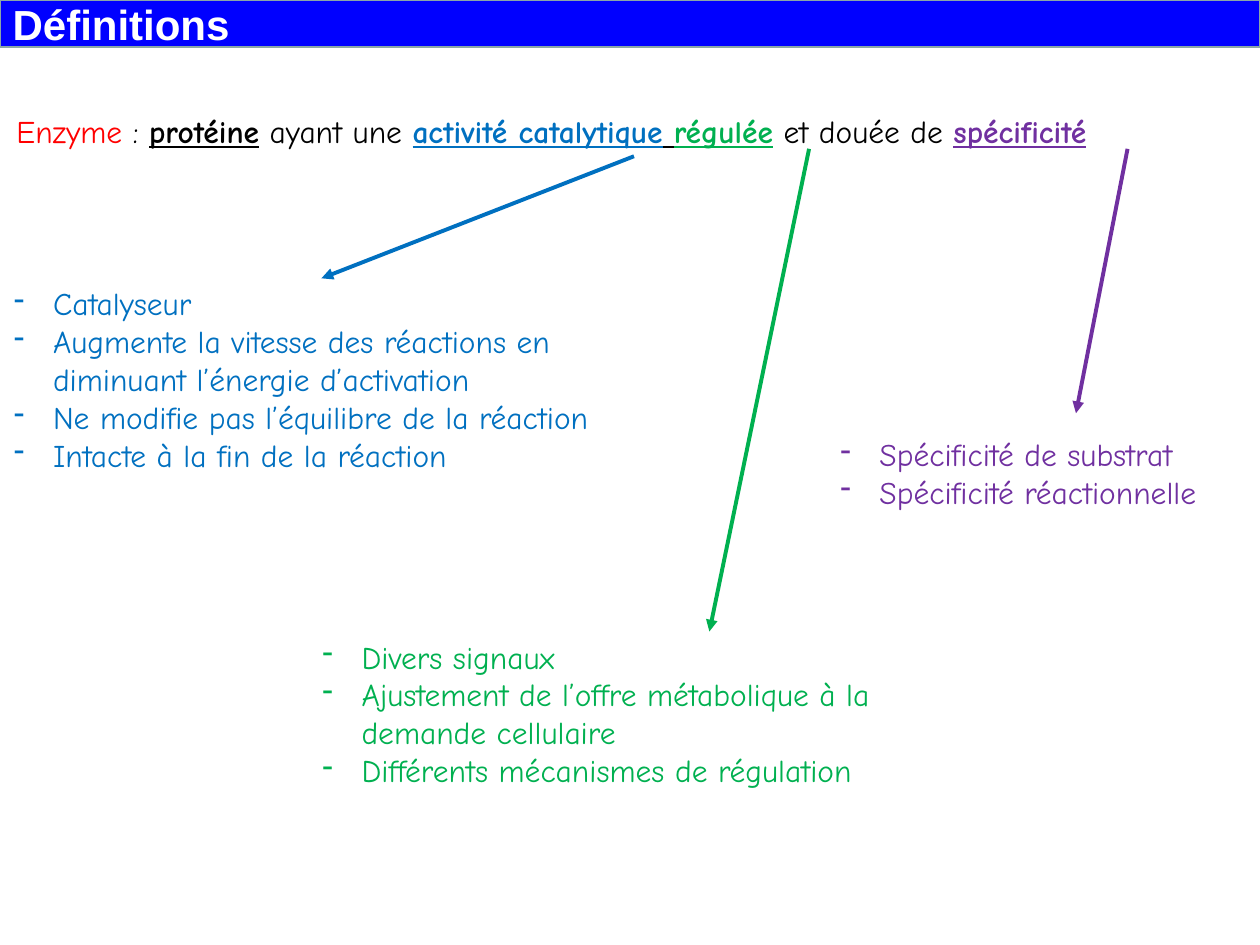
from lxml.etree import SubElement
from pptx import Presentation
from pptx.dml.color import RGBColor
from pptx.enum.shapes import MSO_CONNECTOR as Connector
from pptx.enum.text import MSO_ANCHOR as Anchor, MSO_AUTO_SIZE as AutoSize, PP_ALIGN as Align
from pptx.oxml.ns import qn
from pptx.util import Cm, Pt

COLORS = {
    "band": "0000FF", "band_edge": "8AA6A8", "white": "FFFFFF", "black": "000000",
    "term": "FF0000", "catalysis": "0070C0", "regulation": "00B050", "specificity": "7030A0",
}
DEFINITION = [
    ("Enzyme", "term", False),
    (" : ", "black", False),
    ("protéine", "black", True),
    (" ayant une ", "black", False),
    ("activité catalytique", "catalysis", True),
    (" ", "black", True),
    ("régulée", "regulation", True),
    (" et douée de ", "black", False),
    ("spécificité", "specificity", True),
]
PROPERTIES = [
    ("catalysis", (0.03, 5.61, 12.88, 4.88), (12.78, 3.15, 6.48, 5.61), [
        "Catalyseur",
        "Augmente la vitesse des réactions en diminuant l’énergie d’activation",
        "Ne modifie pas l’équilibre de la réaction",
        "Intacte à la fin de la réaction",
    ]),
    ("regulation", (6.25, 12.73, 12.88, 3.33), (16.31, 3, 14.3, 12.73), [
        "Divers signaux",
        "Ajustement de l’offre métabolique à la demande cellulaire",
        "Différents mécanismes de régulation",
    ]),
    ("specificity", (16.69, 8.64, 12.88, 1.8), (22.73, 3, 21.69, 8.33), [
        "Spécificité de substrat",
        "Spécificité réactionnelle",
    ]),
]


def color(name):
    return RGBColor.from_string(COLORS[name])


def write(paragraph, text, tint="black", size=18, font="Comic Neue", bold=False, underline=False):
    run = paragraph.add_run()
    run.text = text
    run.font.name = font
    run.font.size = Pt(size)
    run.font.bold = bold
    run.font.underline = underline
    run.font.color.rgb = color(tint)


def add_frame(slide, box):
    frame = slide.shapes.add_textbox(*map(Cm, box)).text_frame
    frame.word_wrap = True
    return frame


def add_title(slide, box):
    title = slide.shapes.title
    title.left, title.top, title.width, title.height = map(Cm, box)
    title.fill.solid()
    title.fill.fore_color.rgb = color("band")
    title.line.color.rgb = color("band_edge")
    title.line.width = Pt(1)
    frame = title.text_frame
    frame.auto_size = AutoSize.NONE
    frame.vertical_anchor = Anchor.MIDDLE
    heading = frame.paragraphs[0]
    heading.alignment = Align.LEFT
    write(heading, "Définitions", tint="white", size=24, font="Arial", bold=True)


def add_definition(slide, box):
    sentence = add_frame(slide, box).paragraphs[0]
    for text, tint, key in DEFINITION:
        write(sentence, text, tint=tint, bold=key, underline=key)


def add_property(slide, box, tint, points):
    frame = add_frame(slide, box)
    for index, point in enumerate(points):
        item = frame.add_paragraph() if index else frame.paragraphs[0]
        layout = item._p.get_or_add_pPr()
        layout.set("marL", str(Cm(0.79)))
        layout.set("indent", str(-Cm(0.79)))
        SubElement(layout, qn("a:buChar"), char="-")
        write(item, point, tint=tint)


def add_arrow(slide, ends, tint):
    arrow = slide.shapes.add_connector(Connector.STRAIGHT, *map(Cm, ends))
    arrow.line.color.rgb = color(tint)
    arrow.line.width = Pt(2.25)
    SubElement(arrow.line._get_or_add_ln(), qn("a:tailEnd"), type="triangle")
    SubElement(arrow._element.spPr, qn("a:effectLst"))


def main():
    deck = Presentation()
    deck.slide_width, deck.slide_height = Cm(25.4), Cm(19.05)
    slide = deck.slides.add_slide(deck.slide_layouts[5])
    add_title(slide, (0, 0, 25.4, 0.95))
    add_definition(slide, (0.08, 2.13, 25.4, 1.02))
    for tint, box, ends, points in PROPERTIES:
        add_property(slide, box, tint, points)
        add_arrow(slide, ends, tint)
    deck.save("out.pptx")


if __name__ == "__main__":
    main()
